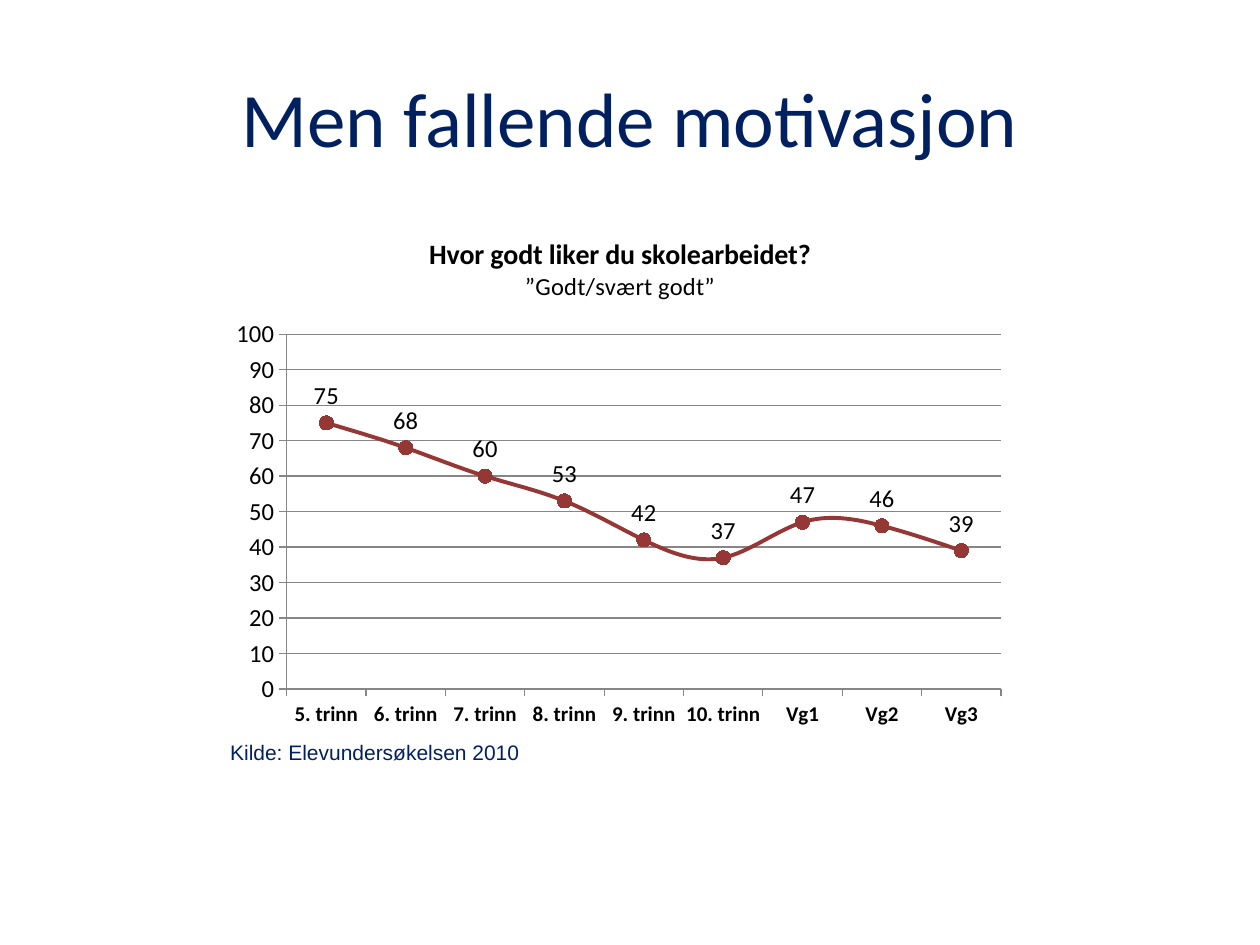
import pptx
import pptx.chart.data
import pptx.dml.color
import pptx.enum.chart
import pptx.enum.text
import pptx.oxml
import pptx.util
from pptx.util import Cm

COLORS = {
    "navy": "002060",
    "black": "000000",
    "red": "953735",
    "dark_red": "632523",
    "green": "4F6228",
    "grid": "868686",
    "white": "FFFFFF",
}
NS = "http://schemas.openxmlformats.org/drawingml/2006/"


def rgb(name):
    return pptx.dml.color.RGBColor.from_string(COLORS[name])


def write(paragraph, text, size, font="Calibri", color="navy", bold=False, align=None):
    paragraph.alignment = align
    run = paragraph.add_run()
    run.text = text
    run.font.size = pptx.util.Pt(size)
    run.font.name = font
    run.font.bold = bold
    run.font.color.rgb = rgb(color)


liking_by_grade = {
    "5. trinn": 75, "6. trinn": 68, "7. trinn": 60,
    "8. trinn": 53, "9. trinn": 42, "10. trinn": 37,
    "Vg1": 47, "Vg2": 46, "Vg3": 39,
}
highlighted_grades = ("9. trinn", "10. trinn")

presentation = pptx.Presentation()
presentation.slide_width = Cm(25.4)
presentation.slide_height = Cm(19.05)
slide = presentation.slides.add_slide(presentation.slide_layouts[6])

headline = slide.shapes.add_textbox(Cm(1.27), Cm(0.76), Cm(22.86), Cm(3.18)).text_frame
headline.word_wrap = True
headline.vertical_anchor = pptx.enum.text.MSO_ANCHOR.MIDDLE
write(headline.paragraphs[0], "Men fallende motivasjon", size=44,
      align=pptx.enum.text.PP_ALIGN.CENTER)

survey = pptx.chart.data.CategoryChartData(number_format="0")
survey.categories = list(liking_by_grade)
survey.add_series("Series 1", list(liking_by_grade.values()))
motivation = slide.shapes.add_chart(
    pptx.enum.chart.XL_CHART_TYPE.LINE_MARKERS,
    Cm(4.5), Cm(4.32), Cm(16), Cm(10.52), survey).chart
motivation.has_legend = False
motivation.font.size = pptx.util.Pt(14)
motivation.font.name = "Calibri"
motivation.font.color.rgb = rgb("black")

motivation.has_title = True
question = motivation.chart_title.text_frame
write(question.paragraphs[0], "Hvor godt liker du skolearbeidet?", size=16,
      color="black", bold=True)
write(question.add_paragraph(), "”Godt/svært godt”", size=14, color="black")

grades = motivation.category_axis
grades.tick_labels.font.size = pptx.util.Pt(12)
grades.tick_labels.font.bold = True
percent = motivation.value_axis
percent.minimum_scale = 0
percent.maximum_scale = 100
percent.major_unit = 10
percent.has_major_gridlines = True
percent.major_gridlines.format.line.color.rgb = rgb("grid")
percent.tick_labels.number_format = "0"
percent.tick_labels.number_format_is_linked = False
for axis in (grades, percent):
    axis.major_tick_mark = pptx.enum.chart.XL_TICK_MARK.OUTSIDE
    axis.format.line.color.rgb = rgb("grid")

plot = motivation.plots[0]
plot.vary_by_categories = False
liking = plot.series[0]
liking.smooth = True
liking.format.line.color.rgb = rgb("red")
liking.format.line.width = pptx.util.Pt(2.25)
liking.marker.style = pptx.enum.chart.XL_MARKER_STYLE.CIRCLE
liking.marker.size = 8
liking.marker.format.fill.solid()
liking.marker.format.fill.fore_color.rgb = rgb("red")
liking.marker.format.line.color.rgb = rgb("dark_red")

for position, grade in enumerate(liking_by_grade):
    if grade in highlighted_grades:
        point = liking.points[position]
        point.format.line.color.rgb = rgb("red")
        point.format.line.width = pptx.util.Pt(2.25)
        point.marker.style = pptx.enum.chart.XL_MARKER_STYLE.CIRCLE
        point.marker.size = 8
        point.marker.format.fill.solid()
        point.marker.format.fill.fore_color.rgb = rgb("green")
        point.marker.format.line.color.rgb = rgb("green")

shares = liking.data_labels
shares.show_value = True
shares.position = pptx.enum.chart.XL_LABEL_POSITION.ABOVE
shares.number_format = "0"
shares.number_format_is_linked = False

backdrop = pptx.oxml.parse_xml(
    f'<c:spPr xmlns:c="{NS}chart" xmlns:a="{NS}main"><a:solidFill>'
    f'<a:srgbClr val="{COLORS["white"]}"><a:alpha val="50000"/></a:srgbClr>'
    '</a:solidFill><a:ln><a:noFill/></a:ln></c:spPr>')
motivation.element.find(f"{{{NS}chart}}chart").addnext(backdrop)

plot_area = motivation.element.find(f".//{{{NS}chart}}plotArea")
for old_layout in plot_area.findall(f"{{{NS}chart}}layout"):
    plot_area.remove(old_layout)
plot_area.insert(0, pptx.oxml.parse_xml(
    f'<c:layout xmlns:c="{NS}chart"><c:manualLayout><c:layoutTarget val="inner"/>'
    '<c:xMode val="edge"/><c:yMode val="edge"/><c:x val="0.08"/><c:y val="0.23"/>'
    '<c:w val="0.9"/><c:h val="0.68"/></c:manualLayout></c:layout>'))

citation = slide.shapes.add_textbox(Cm(4.39), Cm(14.78), Cm(7.11), Cm(0.76)).text_frame
citation.word_wrap = True
citation.auto_size = pptx.enum.text.MSO_AUTO_SIZE.SHAPE_TO_FIT_TEXT
write(citation.paragraphs[0], "Kilde: Elevundersøkelsen 2010", size=12, font="Arial")

presentation.save("out.pptx")
